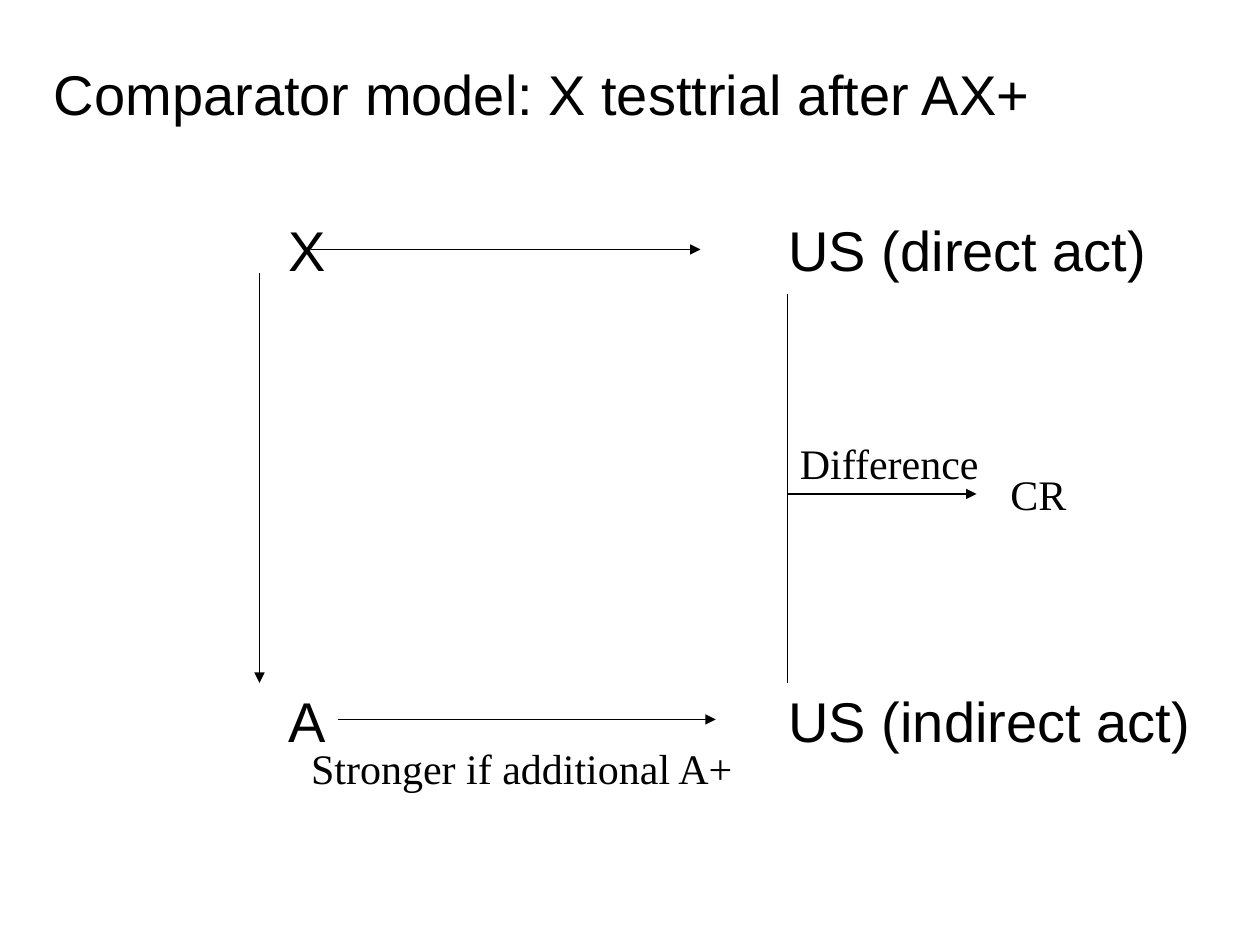
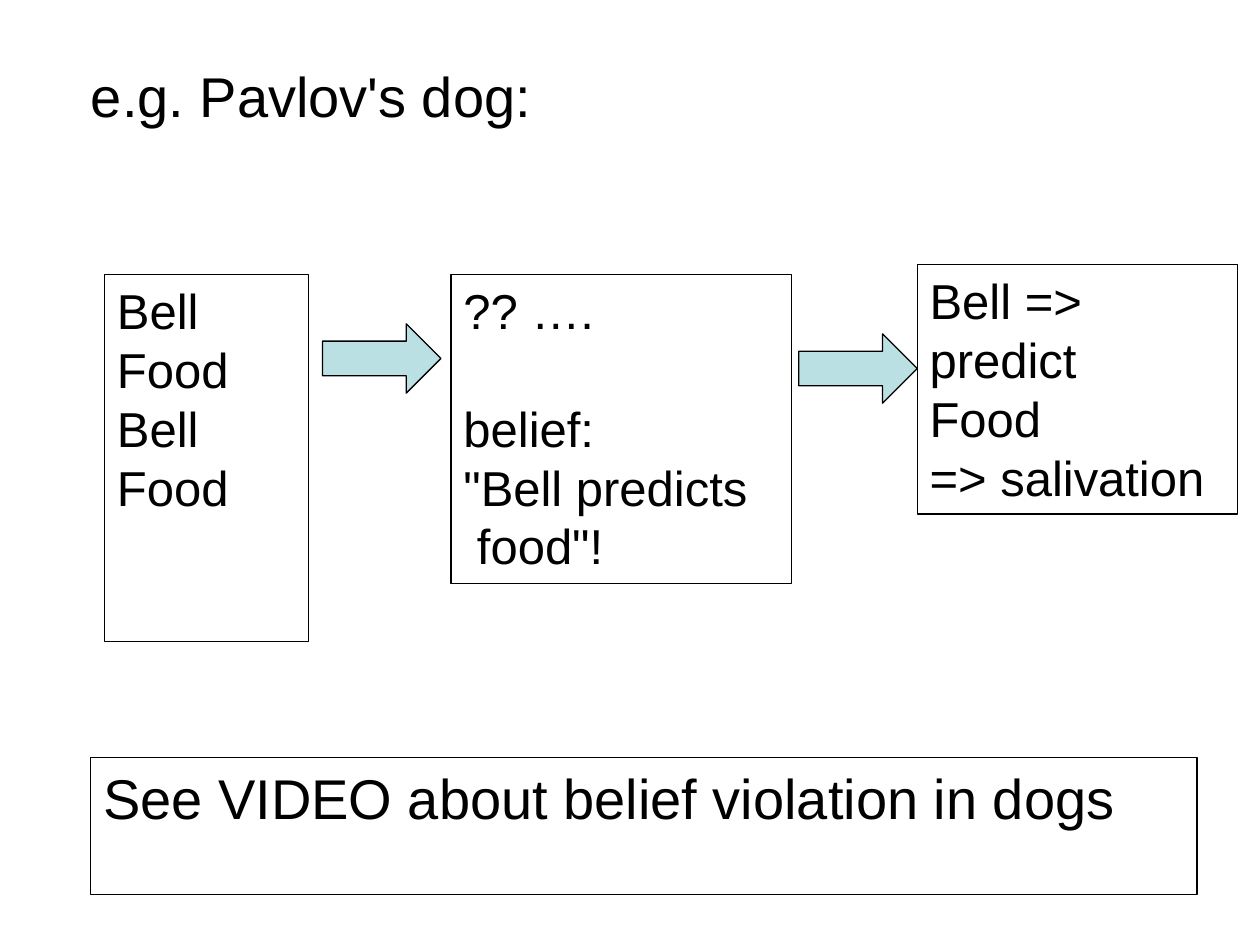
from lxml import etree
from pptx import Presentation
from pptx.dml.color import RGBColor
from pptx.enum.shapes import MSO_CONNECTOR, MSO_SHAPE
from pptx.enum.text import MSO_ANCHOR, PP_ALIGN
from pptx.oxml.ns import qn
from pptx.util import Inches, Pt

RECTANGLE = MSO_SHAPE.RECTANGLE
RIGHT_ARROW = MSO_SHAPE.RIGHT_ARROW
STRAIGHT = MSO_CONNECTOR.STRAIGHT
TOP = MSO_ANCHOR.TOP
LEFT = PP_ALIGN.LEFT

COLOURS = {"ink": "000000", "arrow": "BBE0E3"}
SANS, SERIF = "Arial", "Times New Roman"
TITLE_SIZE, BOX_SIZE, NOTE_SIZE = 32, 28, 24
LINE_FACTOR = 1.2
LINE_WIDTH = Pt(0.75)


def colour(name):
    return RGBColor.from_string(COLOURS[name])


def write_text(shape, text, size=TITLE_SIZE, font=SANS, gap_before=None):
    """Fill a shape with one paragraph a line; gap_before names a line set one line lower."""
    frame = shape.text_frame
    frame.word_wrap = True
    frame.vertical_anchor = TOP
    for number, line in enumerate(text.split("\n")):
        para = frame.paragraphs[0] if number == 0 else frame.add_paragraph()
        para.alignment = LEFT
        para.line_spacing = Pt(size * LINE_FACTOR)
        if line == gap_before:
            para.space_before = Pt(size * LINE_FACTOR)
        span = para.add_run()
        span.text = line
        span.font.size = Pt(size)
        span.font.name = font
        span.font.color.rgb = colour("ink")


def add_label(page, text, left, top, width, height=0.63, **text_format):
    box = page.shapes.add_textbox(Inches(left), Inches(top), Inches(width), Inches(height))
    write_text(box, text, **text_format)


def add_note(page, text, left, top, width):
    add_label(page, text, left, top, width, height=0.5, size=NOTE_SIZE, font=SERIF)


def add_outlined(page, kind, left, top, width, height, fill=None):
    shape = page.shapes.add_shape(kind, Inches(left), Inches(top), Inches(width), Inches(height))
    shape.shadow.inherit = False
    if fill:
        shape.fill.solid()
        shape.fill.fore_color.rgb = colour(fill)
    else:
        shape.fill.background()
    shape.line.color.rgb = colour("ink")
    shape.line.width = LINE_WIDTH
    return shape


def add_line(page, start, end, arrow=True):
    points = [Inches(value) for value in (*start, *end)]
    line = page.shapes.add_connector(STRAIGHT, *points)
    line.line.color.rgb = colour("ink")
    line.line.width = LINE_WIDTH
    if arrow:
        etree.SubElement(line.line._get_or_add_ln(), qn("a:tailEnd"), type="triangle")
    etree.SubElement(line._element.spPr, qn("a:effectLst"))


def build_comparator(page):
    add_label(page, "Comparator model: X testtrial after AX+", 0.33, 0.42, 9.5)

    # Stimuli on the left, activated outcomes on the right
    for stimulus, outcome, top in (("X", "US (direct act)", 1.66),
                                   ("A", "US (indirect act)", 5.4)):
        add_label(page, stimulus, 2.19, top, 0.6)
        add_label(page, outcome, 6.16, top, 3.6)

    # Comparison of the two outcomes
    add_line(page, (6.25, 2.33), (6.25, 5.42), arrow=False)
    add_line(page, (6.25, 3.92), (7.75, 3.92))
    add_note(page, "CR", 7.92, 3.67, 0.75)
    add_note(page, "Difference", 6.25, 3.42, 1.77)

    # Associations
    add_line(page, (2.06, 2.17), (2.06, 5.42))
    add_line(page, (2.47, 1.98), (5.56, 1.98))
    add_line(page, (2.68, 5.71), (5.68, 5.71))
    add_note(page, "Stronger if additional A+", 2.37, 5.84, 3.78)


def build_pavlov(page):
    add_label(page, " e.g. Pavlov's dog:", 0.5, 0.44, 9)

    # Experience, belief, response
    stages = (
        ("Bell\nFood\nBell\nFood", 0.83, 2.18, 1.62, 2.91),
        ('?? ….\nbelief:\n"Bell predicts\n food"!', 3.58, 2.18, 2.7, 2.45),
        ("Bell =>\npredict\nFood\n=> salivation", 7.28, 2.1, 2.54, 1.98),
    )
    for text, *place in stages:
        stage = add_outlined(page, RECTANGLE, *place)
        write_text(stage, text, size=BOX_SIZE, gap_before="belief:")
    for left, top in ((2.56, 2.57), (6.34, 2.65)):
        add_outlined(page, RIGHT_ARROW, left, top, 0.94, 0.55, fill="arrow")

    # Pointer to the video
    video = add_outlined(page, RECTANGLE, 0.72, 6.01, 8.78, 1.09)
    write_text(video, "See VIDEO about belief violation in dogs")


def main():
    deck = Presentation()
    deck.slide_width, deck.slide_height = Inches(10), Inches(7.5)
    blank = deck.slide_layouts[6]
    for build in (build_comparator, build_pavlov):
        build(deck.slides.add_slide(blank))
    deck.save("out.pptx")


if __name__ == "__main__":
    main()
